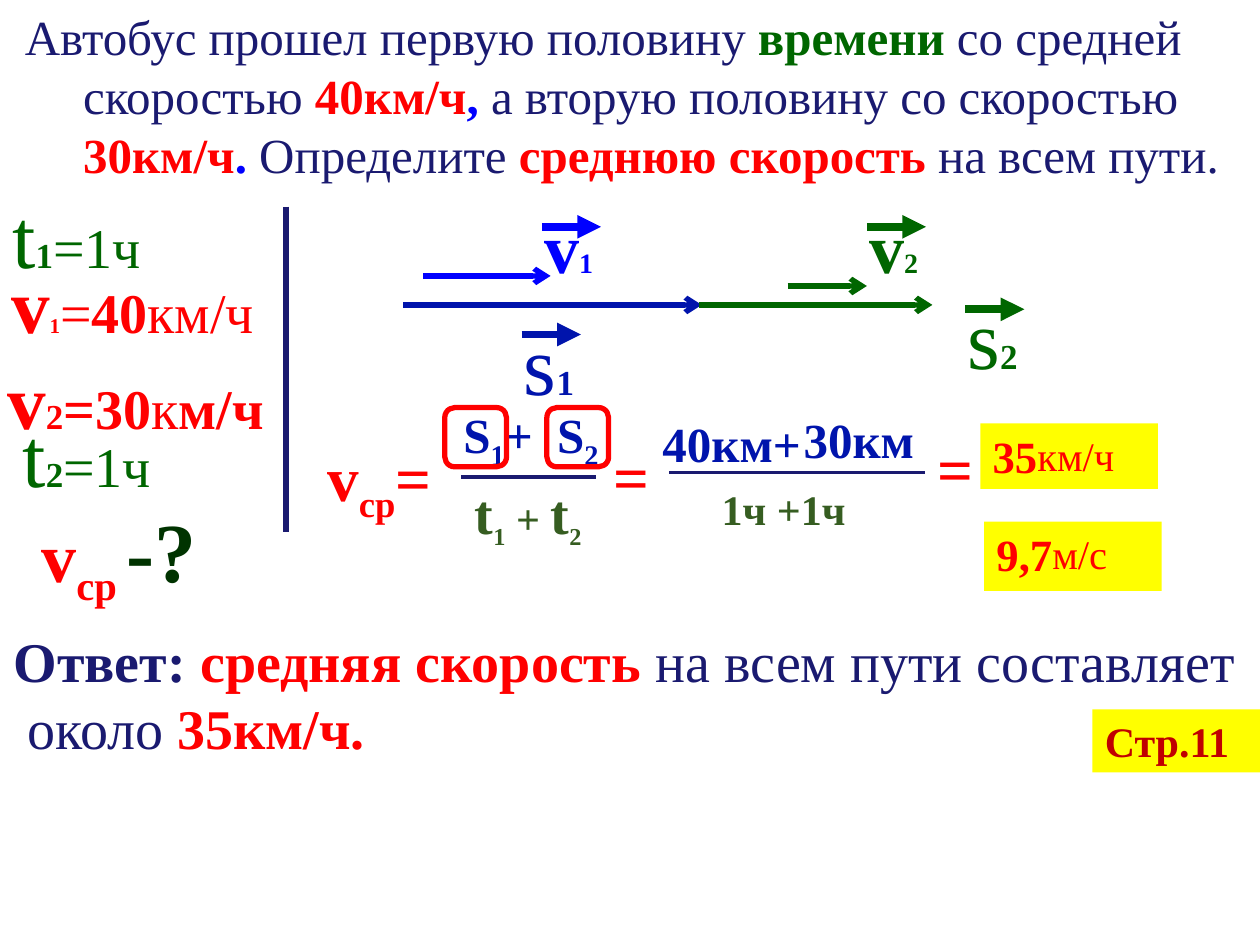
from dataclasses import dataclass

from lxml.etree import SubElement
from pptx import Presentation
from pptx.dml.color import RGBColor
from pptx.enum.shapes import MSO_CONNECTOR as CONN, MSO_SHAPE as SHAPE
from pptx.enum.text import MSO_ANCHOR as ANCHOR, MSO_AUTO_SIZE as FIT, PP_ALIGN as ALIGN
from pptx.oxml.ns import qn
from pptx.util import Inches, Pt

COLS, ROWS = 100, 75


@dataclass(frozen=True)
class Theme:
    font: str = "Times New Roman"
    navy: str = "1A1A70"
    blue: str = "0000FF"
    royal: str = "0014AC"
    green: str = "006600"
    dark_green: str = "003300"
    olive: str = "365D21"
    red: str = "FF0000"
    dark_red: str = "C00000"
    yellow: str = "FFFF00"
    tiny: int = 12
    index: int = 16
    label: int = 20
    small: int = 24
    text: int = 28
    large: int = 32
    formula: int = 36
    symbol: int = 40
    big: int = 44
    huge: int = 48


T = Theme()
SUB = -25
PLAIN = {"color": T.navy, "bold": False}
KEY = {"color": T.red, "bold": True}


def span(text, **fmt):
    """Text with its format; what is not given carries over from the span before."""
    return text, fmt


def write_run(p, text, size=T.text, color=T.navy, bold=False, base=0):
    r = p.add_run()
    r.text = text
    r.font.name, r.font.size, r.font.bold = T.font, Pt(size), bold
    r.font.color.rgb = RGBColor.from_string(color)
    if base:
        r._r.get_or_add_rPr().set("baseline", str(base * 1000))


class Board:
    """The current slide, measured in cells of a COLS by ROWS grid."""

    def __init__(self, prs):
        self.s = prs.slides.add_slide(prs.slide_layouts[5])
        self.cell_w = prs.slide_width / COLS
        self.cell_h = prs.slide_height / ROWS

    def cells(self, *lengths):
        units = (self.cell_w, self.cell_h) * 2
        return [round(n * unit) for n, unit in zip(lengths, units)]

    def fill_text(self, tf, paragraphs, spacing=None, wrap=True):
        tf.word_wrap, tf.auto_size = wrap, FIT.SHAPE_TO_FIT_TEXT
        fmt = {}
        for i, spans in enumerate(paragraphs):
            p = tf.add_paragraph() if i else tf.paragraphs[0]
            p.alignment = ALIGN.LEFT
            if spacing:
                p.line_spacing = Pt(spacing)
            for text, change in spans:
                fmt = {**fmt, **change}
                write_run(p, text, **fmt)

    def title(self, at, *spans, hang):
        sp = self.s.shapes.title
        sp.left, sp.top, sp.width, sp.height = self.cells(*at)
        tf = sp.text_frame
        self.fill_text(tf, [spans])
        tf.vertical_anchor = ANCHOR.MIDDLE
        pPr = tf.paragraphs[0]._p.get_or_add_pPr()
        pPr.set("marL", str(Inches(hang)))
        pPr.set("indent", str(-Inches(hang)))

    def text(self, at, *paragraphs, fill=None, **layout):
        sp = self.s.shapes.add_textbox(*self.cells(*at))
        if fill:
            sp.fill.solid()
            sp.fill.fore_color.rgb = RGBColor.from_string(fill)
        self.fill_text(sp.text_frame, paragraphs, **layout)

    def line(self, start, end, color, width=3, head=None):
        cn = self.s.shapes.add_connector(CONN.STRAIGHT, *self.cells(*start, *end))
        cn.line.color.rgb = RGBColor.from_string(color)
        cn.line.width = Pt(width)
        if head:
            SubElement(cn.line._get_or_add_ln(), qn("a:tailEnd"), type=head)
        SubElement(cn._element.spPr, qn("a:effectLst"))

    def vector(self, at, *spans, color):
        """A quantity with a short arrow over its letter."""
        self.text(at, spans)
        x, y = at[0] + 0.8, at[1] + 2.35
        self.line((x, y), (x + 4.7, y), color, 4.5, "triangle")

    def frame(self, at, color):
        sp = self.s.shapes.add_shape(SHAPE.ROUNDED_RECTANGLE, *self.cells(*at))
        sp.shadow.inherit = False
        sp.fill.background()
        sp.line.color.rgb = RGBColor.from_string(color)
        sp.line.width = Pt(3)


def add_problem(b):
    b.title((0, 0, 100, 15.1),
            span(" ", size=T.text, color=T.dark_red, bold=True),
            span("Автобус прошел первую половину ", **PLAIN),
            span("времени", color=T.green, bold=True),
            span(" со средней скоростью ", **PLAIN), span("40км/ч", **KEY),
            span(",", color=T.blue),
            span(" а вторую половину со скоростью ", **PLAIN),
            span("30км/ч", **KEY), span(".", color=T.blue),
            span(" Определите ", **PLAIN), span("среднюю скорость", **KEY),
            span(" на всем пути.", **PLAIN), hang=0.56)


def add_given(b):
    for at, number in (((0, 18, 21.1, 5.7), "1"), ((0.8, 35.4, 14.1, 5.2), "2")):
        b.text(at, [span("t", size=T.huge, color=T.green),
                    span(number, size=T.label, bold=True),
                    span("=1ч", size=T.large, bold=False)], spacing=30)
    b.text((-0.1, 23, 22.7, 5.6),
           [span("v", size=T.big, **KEY), span("1", size=T.tiny),
            span("=", size=T.large, bold=False), span("40", bold=True),
            span("км/ч", bold=False)], spacing=30)
    b.text((-0.4, 31.2, 24.2, 4.7),
           [span("v", size=T.big, **KEY), span("2", size=T.label),
            span("=30", size=T.large), span("к", bold=False),
            span("м/ч", bold=True)], spacing=26)
    b.text((2.3, 39.1, 17.2, 9.1),
           [span("v", size=T.symbol, **KEY), span("ср ", base=SUB),
            span("-?", size=T.huge, color=T.dark_green, base=0)])
    b.line((22.7, 16.4), (22.7, 42.2), T.navy)


def add_motion(b):
    for start, end, y, color in ((32, 55.7, 24.2, T.royal), (33.6, 43.7, 21.9, T.blue),
                                 (55.5, 74, 24.2, T.green), (62.5, 68.8, 22.7, T.green)):
        b.line((start, y), (end, y), color, head="arrow")
    for x, y, number, color in ((40.6, 24.2, "1", T.royal), (75.8, 22.2, "2", T.green)):
        b.vector((x, y, 7, 9.1), span("s", size=T.huge, color=color),
                 span(number, size=T.label, bold=True), color=color)
    for x, number, color in ((42.2, "1", T.blue), (68, "2", T.green)):
        b.vector((x, 15.65, 7.8, 7.7), span("v", size=T.symbol, color=color, bold=True),
                 span(number, size=T.index), color=color)


def add_formula(b):
    b.text((25, 34.3, 12.5, 7.1), [span("v", size=T.formula, **KEY),
                                   span("ср", base=SUB), span("=", base=0)])
    b.text((35.8, 31.6, 15.8, 5.7),
           [span("S", size=T.text, color=T.royal, bold=True), span("1", base=SUB),
            span("+  S", base=0), span("2", base=SUB)])
    b.text((36.7, 37.5, 11.1, 6.4),
           [span("t", size=T.large, color=T.olive, bold=True),
            span("1", size=T.small, base=SUB), span(" + ", base=0),
            span("t", size=T.large), span("2", size=T.small, base=SUB)])
    for start, end, y in ((36.6, 47.3, 37.85), (53.1, 73.4, 37.5)):
        b.line((start, y), (end, y), T.navy, 2.25)
    for x, y in ((47.7, 34.2), (73.4, 33.6)):
        b.text((x, y, 5.5, 7.1), [span("=", size=T.formula, **KEY)])
    for x in (35.3, 43.4):
        b.frame((x, 32.35, 4.9, 4.7), T.red)
    b.text((51.6, 31.2, 14.4, 7.1),
           [span("40км+", size=T.text, color=T.royal, bold=True),
            span(" ", size=T.formula)])
    b.text((62.8, 32, 14.4, 5.7),
           [span("30км", size=T.text, color=T.royal, bold=True)])
    b.text((56.3, 37.9, 13.3, 5),
           [span("1ч +1ч", size=T.small, color=T.olive, bold=True)])


def add_results(b):
    for at, value, unit in (((77.8, 33.6, 14.1, 5.2), "35", "км/ч"),
                            ((78.1, 41.4, 14.1, 5.5), "9,7", "м/с")):
        b.text(at, [span(value, size=T.big, base=SUB, **KEY),
                    span(unit, size=T.symbol, bold=False)],
               fill=T.yellow, spacing=30)
    b.text((0.1, 49.2, 99.9, 11.8),
           [span("Ответ: ", size=T.large, color=T.navy, bold=True),
            span("средняя скорость", **KEY),
            span(" на всем пути составляет", **PLAIN)],
           [span(" около "), span("35км/ч.", **KEY)], wrap=False)
    b.text((86.7, 56.3, 13.3, 5),
           [span("Стр.11", size=T.small, color=T.dark_red, bold=True)], fill=T.yellow)


def main():
    prs = Presentation()
    prs.slide_width, prs.slide_height = Inches(10), Inches(7.5)
    b = Board(prs)
    for add_part in (add_problem, add_given, add_motion, add_formula, add_results):
        add_part(b)
    prs.save("out.pptx")


if __name__ == "__main__":
    main()
